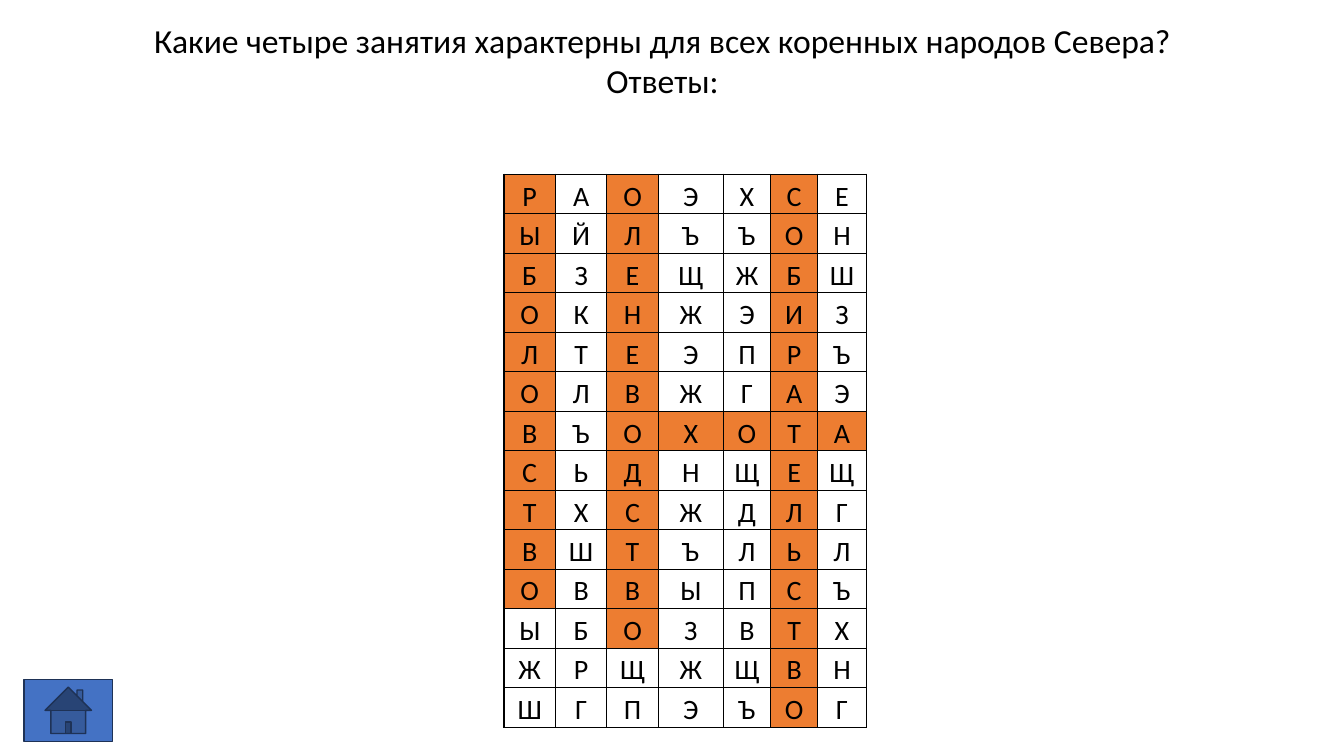
from lxml.etree import SubElement
from pptx import Presentation
from pptx.dml.color import RGBColor
from pptx.enum.shapes import MSO_SHAPE
from pptx.enum.text import MSO_ANCHOR, MSO_AUTO_SIZE, PP_ALIGN
from pptx.oxml.ns import qn
from pptx.util import Pt

PX = 9525
FONT = "Calibri"
COLORS = {
    "text": "000000",
    "grid": "000000",
    "answer": "ED7D31",
    "button": "4472C4",
    "button_line": "1E3256",
}
TITLE = [
    "Какие четыре занятия характерны для всех коренных народов Севера?",
    "Ответы:",
]
LETTERS = [
    "РАОЭХСЕ",
    "ЫЙЛЪЪОН",
    "БЗЕЩЖБШ",
    "ОКНЖЭИЗ",
    "ЛТЕЭПРЪ",
    "ОЛВЖГАЭ",
    "ВЪОХОТА",
    "СЬДНЩЕЩ",
    "ТХСЖДЛГ",
    "ВШТЪЛЬЛ",
    "ОВВЫПСЪ",
    "ЫБОЗВТХ",
    "ЖРЩЖЩВН",
    "ШГПЭЪОГ",
]
COLUMN_WIDTHS = [49, 49, 49, 62, 45, 45, 46]
DOWN_ANSWERS = {0: "РЫБОЛОВСТВО", 2: "ОЛЕНЕВОДСТВО", 5: "СОБИРАТЕЛЬСТВО"}
ACROSS_ANSWER = (6, 2)


def color(name):
    """Return the named colour."""
    return RGBColor.from_string(COLORS[name])


def format_paragraph(para, size):
    """Centre a paragraph and set its font."""
    para.alignment = PP_ALIGN.CENTER
    para.font.name = FONT
    para.font.size = Pt(size)
    para.font.color.rgb = color("text")


def add_title(page, left, top, width, height):
    """Place the question in the title placeholder."""
    box = page.shapes.title
    box.left, box.top = left * PX, top * PX
    box.width, box.height = width * PX, height * PX
    frame = box.text_frame
    frame.text = "\n".join(TITLE)
    frame.word_wrap = True
    frame.auto_size = MSO_AUTO_SIZE.SHAPE_TO_FIT_TEXT
    frame.vertical_anchor = MSO_ANCHOR.TOP
    for para in frame.paragraphs:
        format_paragraph(para, 24)


def is_answer(row, column):
    """Tell whether a cell belongs to a hidden word."""
    across_row, across_start = ACROSS_ANSWER
    down = row < len(DOWN_ANSWERS.get(column, ""))
    return down or (row == across_row and column >= across_start)


def add_borders(cell):
    """Draw a thin line on every side of a cell."""
    properties = cell._tc.get_or_add_tcPr()
    for side in ("a:lnL", "a:lnR", "a:lnT", "a:lnB"):
        line = SubElement(properties, qn(side), w=str(Pt(1)))
        fill = SubElement(line, qn("a:solidFill"))
        SubElement(fill, qn("a:srgbClr"), val=COLORS["grid"])


def format_cell(cell, letter, highlighted):
    """Write one letter and colour its cell."""
    cell.margin_left = cell.margin_right = 7 * PX
    cell.margin_top = cell.margin_bottom = 0
    cell.text = letter
    para = cell.text_frame.paragraphs[0]
    para.line_spacing = 1.15
    para.space_after = Pt(8)
    format_paragraph(para, 20)
    add_borders(cell)
    if highlighted:
        cell.fill.solid()
        cell.fill.fore_color.rgb = color("answer")
    else:
        cell.fill.background()


def add_letter_grid(page, left, top, height):
    """Place the letter puzzle with its answers highlighted."""
    table = page.shapes.add_table(
        len(LETTERS), len(COLUMN_WIDTHS), left * PX, top * PX,
        sum(COLUMN_WIDTHS) * PX, height * PX,
    ).table
    table.first_row = table.horz_banding = False
    for column, width in zip(table.columns, COLUMN_WIDTHS):
        column.width = width * PX
    for row, word in enumerate(LETTERS):
        table.rows[row].height = height * PX // len(LETTERS)
        for column, letter in enumerate(word):
            format_cell(table.cell(row, column), letter, is_answer(row, column))


def add_home_button(page, left, top, width, height):
    """Place the home button."""
    button = page.shapes.add_shape(
        MSO_SHAPE.ACTION_BUTTON_HOME, left * PX, top * PX, width * PX, height * PX
    )
    button.shadow.inherit = False
    button.fill.solid()
    button.fill.fore_color.rgb = color("button")
    button.line.color.rgb = color("button_line")
    button.line.width = Pt(1)


def main():
    """Build and save the answer slide."""
    deck = Presentation()
    deck.slide_width, deck.slide_height = 1280 * PX, 720 * PX
    page = deck.slides.add_slide(deck.slide_layouts[5])
    add_title(page, 63, 14, 1136, 87)
    add_letter_grid(page, 480, 166, 527)
    add_home_button(page, 23, 647, 84, 59)
    deck.save("out.pptx")


if __name__ == "__main__":
    main()
